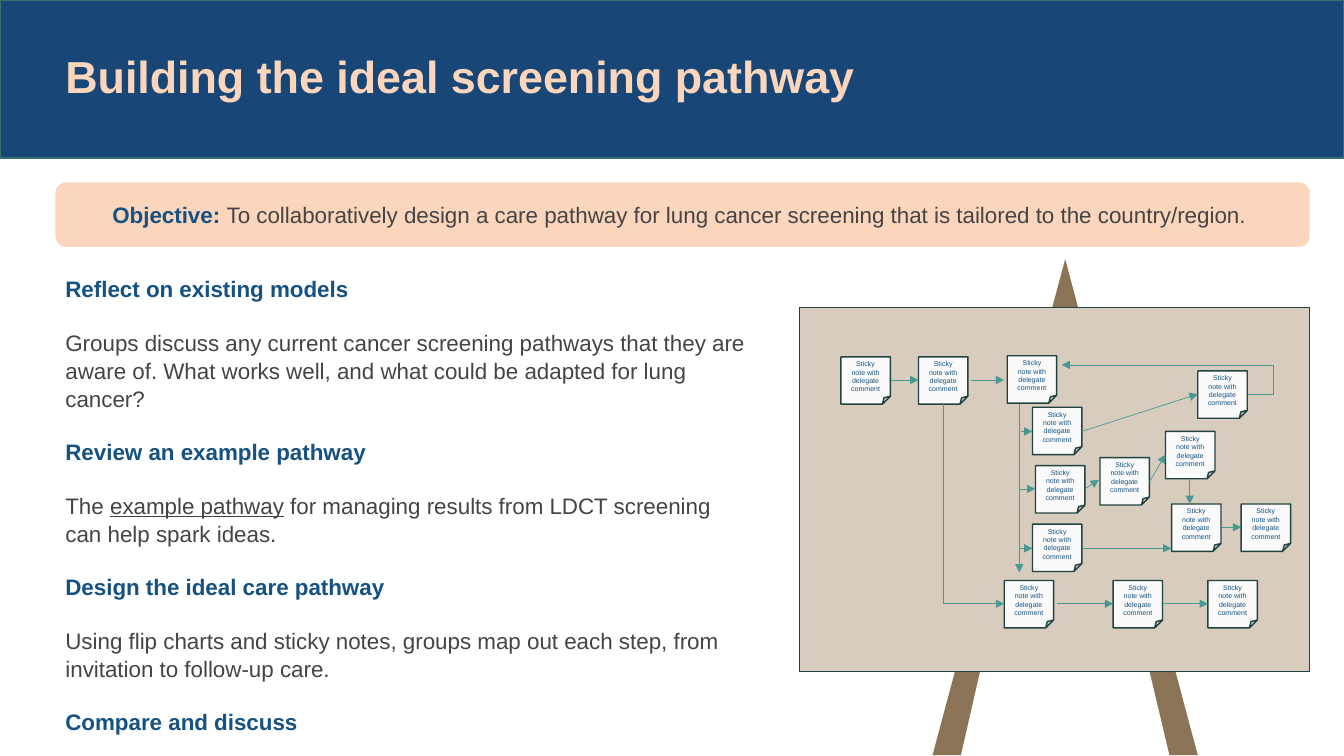
import lxml.etree
import pptx
import pptx.dml.color
import pptx.enum.shapes
import pptx.enum.text
import pptx.oxml.ns
import pptx.util

PX = 9144  # EMU per px, 100 px to the inch
FONT = "Arial"
COLORS = {
    "navy": "174677", "banner_edge": "37716B", "peach": "FBD6BC",
    "blue": "155181", "gray": "444444", "wood": "8B7456", "white": "FFFFFF",
    "board": "D7CCBE", "edge": "20433F", "paper": "FAFAFA", "arrow": "4A9990",
}
SHAPES = pptx.enum.shapes.MSO_SHAPE
CONNECTORS = pptx.enum.shapes.MSO_CONNECTOR
MIDDLE = pptx.enum.text.MSO_ANCHOR.MIDDLE
CENTER = pptx.enum.text.PP_ALIGN.CENTER

TITLE = "Building the ideal screening pathway"
OBJECTIVE = ("To collaboratively design a care pathway for lung cancer screening "
             "that is tailored to the country/region. ")
NOTE_TEXT = "Sticky note with delegate comment"
# Each step: heading, then body runs; every second run is underlined.
STEPS = [
    ("Reflect on existing models",
     ["Groups discuss any current cancer screening pathways that they are aware of. "
      "What works well, and what could be adapted for lung cancer?"]),
    ("Review an example pathway",
     ["The ", "example pathway",
      " for managing results from LDCT screening can help spark ideas."]),
    ("Design the ideal care pathway",
     ["Using flip charts and sticky notes, groups map out each step, "
      "from invitation to follow-up care."]),
    ("Compare and discuss", []),
]

# Positions below are relative to the board's top left corner.
NOTE_SIZE = (49, 47)
NOTES = [
    (41, 49), (118, 49), (206, 48), (231, 99), (234, 157), (231, 215), (298, 149),
    (363, 123), (395, 63), (369, 195), (438, 195), (203, 271), (311, 271), (405, 271),
]
ARROWS = [
    (91, 72, 118, 72), (170, 72, 203, 72), (218, 96, 218, 263),
    (220, 123, 231, 123), (218, 180, 234, 180), (218, 239, 231, 239),
    (280, 123, 395, 86), (283, 180, 297, 171), (347, 173, 363, 146),
    (387, 170, 387, 195), (280, 239, 369, 239), (419, 218, 438, 218),
    (255, 294, 311, 294), (360, 294, 405, 294),
]
LOOP_BACK = (445, 86, 260, 57)
DOWN_THEN_RIGHT = (143, 96, 203, 294)


def px(*lengths):
    return [pptx.util.Emu(round(length * PX)) for length in lengths]


def rgb(name):
    return pptx.dml.color.RGBColor.from_string(COLORS[name])


def set_font(font, size, color, bold=False):
    font.name = FONT
    font.size = pptx.util.Pt(size)
    font.color.rgb = rgb(color)
    font.bold = bold


def add_shape(slide, kind, box, fill, line=None):
    shape = slide.shapes.add_shape(kind, *px(*box))
    shape.shadow.inherit = False
    shape.fill.solid()
    shape.fill.fore_color.rgb = rgb(fill)
    if line:
        shape.line.color.rgb = rgb(line)
        shape.line.width = pptx.util.Pt(1)
    else:
        shape.line.fill.background()
    return shape


def add_text_frame(slide, box):
    frame = slide.shapes.add_textbox(*px(*box)).text_frame
    frame.word_wrap = True
    return frame


def add_arrow(slide, kind, ends):
    connector = slide.shapes.add_connector(kind, *px(*ends))
    connector.line.color.rgb = rgb("arrow")
    connector.line.width = pptx.util.Pt(0.5)
    qn = pptx.oxml.ns.qn
    properties = connector._element.spPr
    lxml.etree.SubElement(properties.find(qn("a:ln")), qn("a:tailEnd"), type="triangle")
    lxml.etree.SubElement(properties, qn("a:effectLst"))
    return connector


def add_loop_arrow(slide, ends):
    """Elbow that leaves its start outwards before turning back."""
    connector = add_arrow(slide, CONNECTORS.ELBOW, ends)
    qn = pptx.oxml.ns.qn
    adjustments = connector._element.spPr.find(qn("a:prstGeom")).get_or_add_avLst()
    lxml.etree.SubElement(adjustments, qn("a:gd"), name="adj1", fmla="val -13500")


def add_corner_arrow(slide, ends):
    """Single-corner elbow running down, then right: a mirrored one turned by 270 degrees."""
    x1, y1, x2, y2 = ends
    center_x, center_y = (x1 + x2) / 2, (y1 + y2) / 2
    half_width, half_height = (y2 - y1) / 2, (x2 - x1) / 2
    connector = add_arrow(slide, CONNECTORS.ELBOW, (
        center_x + half_width, center_y - half_height,
        center_x - half_width, center_y + half_height))
    qn = pptx.oxml.ns.qn
    properties = connector._element.spPr
    properties.find(qn("a:prstGeom")).set("prst", "bentConnector2")
    properties.find(qn("a:xfrm")).set("rot", str(270 * 60000))


def add_banner(slide, left, top, width, height):
    add_shape(slide, SHAPES.RECTANGLE, (left, top, width, height), "navy", "banner_edge")
    frame = add_text_frame(slide, (left + 55, top, 1016, height))
    frame.vertical_anchor = MIDDLE
    paragraph = frame.paragraphs[0]
    paragraph.text = TITLE
    paragraph.line_spacing = 0.9
    set_font(paragraph.font, 32, "peach", True)


def add_objective(slide, *box):
    shape = add_shape(slide, SHAPES.ROUNDED_RECTANGLE, box, "peach")
    shape.text_frame.vertical_anchor = MIDDLE
    paragraph = shape.text_frame.paragraphs[0]
    paragraph.alignment = CENTER
    for text, color, bold in [("Objective: ", "blue", True), (OBJECTIVE, "gray", False)]:
        run = paragraph.add_run()
        run.text = text
        set_font(run.font, 16, color, bold)


def add_steps(slide, *box):
    frame = add_text_frame(slide, box)
    lines = []
    for heading, body in STEPS:
        lines.append(([heading], "blue", True))
        if body:
            lines.append((body, "gray", False))
    for index, (texts, color, bold) in enumerate(lines):
        paragraph = frame.add_paragraph() if index else frame.paragraphs[0]
        paragraph.space_before = pptx.util.Pt(12 if index else 0)
        paragraph.space_after = pptx.util.Pt(6)
        paragraph.line_spacing = 1.05
        set_font(paragraph.font, 16, color, bold)
        for position, text in enumerate(texts):
            run = paragraph.add_run()
            run.text = text
            if position % 2:
                run.font.underline = True


def add_note(slide, left, top):
    note = add_shape(slide, SHAPES.FOLDED_CORNER, (left, top, *NOTE_SIZE), "paper", "edge")
    frame = note.text_frame
    frame.word_wrap = True
    frame.vertical_anchor = MIDDLE
    frame.margin_left, frame.margin_right = px(9, 9)
    paragraph = frame.paragraphs[0]
    paragraph.text = NOTE_TEXT
    paragraph.alignment = CENTER
    set_font(paragraph.font, 5, "blue")


def add_easel(slide, left, top, width, height):
    """Board on wooden legs, with the notes and arrows of the pathway."""
    add_shape(slide, SHAPES.ISOSCELES_TRIANGLE, (left + 132, top - 48, 263, 492), "wood")
    gap = add_shape(slide, SHAPES.ISOSCELES_TRIANGLE, (left + 160, top, 207, 445), "white")
    gap.adjustments[0] = 0.49
    add_shape(slide, SHAPES.RECTANGLE, (left, top, width, height), "board", "edge")

    def on_board(ends):
        x1, y1, x2, y2 = ends
        return left + x1, top + y1, left + x2, top + y2

    for x, y in NOTES:
        add_note(slide, left + x, top + y)
    for ends in ARROWS:
        add_arrow(slide, CONNECTORS.STRAIGHT, on_board(ends))
    add_loop_arrow(slide, on_board(LOOP_BACK))
    add_corner_arrow(slide, on_board(DOWN_THEN_RIGHT))


def main():
    presentation = pptx.Presentation()
    presentation.slide_width, presentation.slide_height = px(1333, 750)
    slide = presentation.slides.add_slide(presentation.slide_layouts[6])
    add_banner(slide, 0, 0, 1333, 157)
    add_steps(slide, 55, 267, 698, 447)
    add_easel(slide, 793, 305, 506, 361)
    add_objective(slide, 55, 181, 1244, 64)
    presentation.save("out.pptx")


if __name__ == "__main__":
    main()
